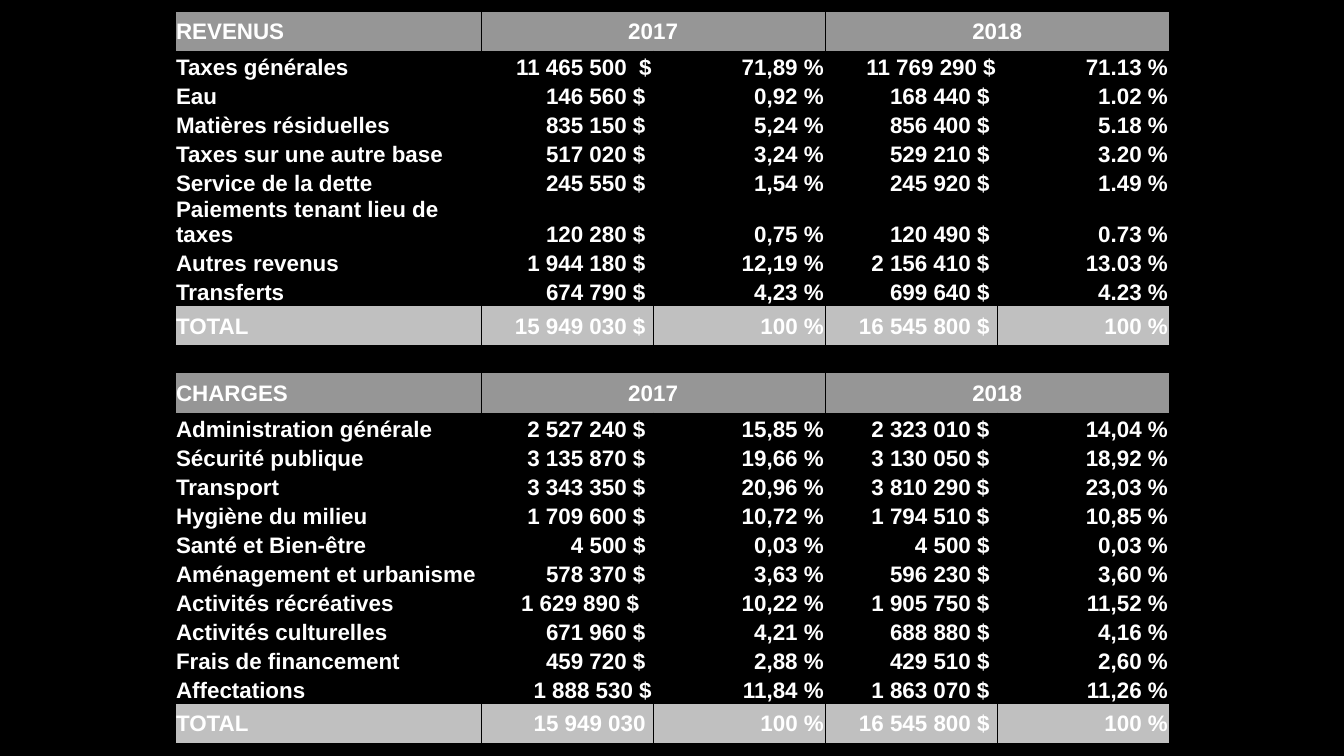
from lxml.etree import SubElement
from pptx import Presentation
from pptx.dml.color import RGBColor
from pptx.enum.text import MSO_ANCHOR, PP_ALIGN
from pptx.oxml.ns import qn
from pptx.util import Inches, Pt

BLACK, WHITE, GREY, SILVER = "000000", "FFFFFF", "969696", "C0C0C0"
PLAIN = "{2D5ABB26-0587-4C30-8999-92F81FD0307C}"
WIDTHS = [2.28, 1.28, 1.28, 1.28, 1.28]
HEIGHTS = {"head": 0.3, "total": 0.3, "gap": 0.2, "tall": 0.37}
FILLS = {"head": GREY, "total": SILVER}
STEP = Inches(2.16) // 10
FONT = {"name": "Arial", "size": Pt(12), "bold": True}
INSETS = {"margin_left": 0.01, "margin_top": 0.01, "margin_right": 0.01, "margin_bottom": 0}

ROWS = [
    ("head", "REVENUS|2017||2018|"),
    ("data", "Taxes générales|11 465 500  $|71,89 %|11 769 290 $|71.13 %"),
    ("data", "Eau|146 560 $ |0,92 %|168 440 $ |1.02 %"),
    ("data", "Matières résiduelles|835 150 $ |5,24 %|856 400 $ |5.18 %"),
    ("data", "Taxes sur une autre base|517 020 $ |3,24 %|529 210 $ |3.20 %"),
    ("data", "Service de la dette|245 550 $ |1,54 %|245 920 $ |1.49 %"),
    ("tall", "Paiements tenant lieu de taxes|120 280 $ |0,75 %|120 490 $ |0.73 %"),
    ("data", "Autres revenus|1 944 180 $ |12,19 %|2 156 410 $ |13.03 %"),
    ("data", "Transferts|674 790 $ |4,23 %|699 640 $ |4.23 %"),
    ("total", "TOTAL|15 949 030 $ |100 %|16 545 800 $ |100 %"),
    ("gap", "||||"),
    ("head", "CHARGES|2017||2018|"),
    ("data", "Administration générale|2 527 240 $ |15,85 %|2 323 010 $ |14,04 %"),
    ("data", "Sécurité publique|3 135 870 $ |19,66 %|3 130 050 $ |18,92 %"),
    ("data", "Transport|3 343 350 $ |20,96 %|3 810 290 $ |23,03 %"),
    ("data", "Hygiène du milieu|1 709 600 $ |10,72 %|1 794 510 $ |10,85 %"),
    ("data", "Santé et Bien-être|4 500 $ |0,03 %|4 500 $ |0,03 %"),
    ("data", "Aménagement et urbanisme|578 370 $ |3,63 %|596 230 $ |3,60 %"),
    ("data", "Activités récréatives|1 629 890 $  |10,22 %|1 905 750 $ |11,52 %"),
    ("data", "Activités culturelles|671 960 $ |4,21 %|688 880 $ |4,16 %"),
    ("data", "Frais de financement|459 720 $ |2,88 %|429 510 $ |2,60 %"),
    ("data", "Affectations|1 888 530 $|11,84 %|1 863 070 $ |11,26 %"),
    ("total", "TOTAL|15 949 030 |100 %|16 545 800 $ |100 %"),
]


def color(text):
    return RGBColor.from_string(text)


def edges(row, col):
    kind = ROWS[row][0]
    body = kind in ("data", "tall")
    last = len(ROWS) - 1
    sides = {}
    if kind != "gap" or col == 0:
        sides["lnL"] = 1 if col == 0 or body and col == 3 else 0.5
    if kind != "gap" or col == 4:
        sides["lnR"] = 1 if body and col == 2 or kind == "gap" else 0.5
    if not body or ROWS[row - 1][0] == "head":
        sides["lnT"] = 1 if row == 0 else 0.5
    if not body or ROWS[row + 1][0] == "total":
        sides["lnB"] = 1 if row == last else 0.5
    return sides


def border(cell, sides):
    props = cell._tc.get_or_add_tcPr()
    for name, width in sides.items():
        line = SubElement(props, qn("a:" + name), w=str(Pt(width)))
        fill = SubElement(line, qn("a:solidFill"))
        SubElement(fill, qn("a:srgbClr"), val=BLACK)


def write(cell, text, align):
    para = cell.text_frame.paragraphs[0]
    para.alignment = align
    if not text:
        mark = SubElement(para._p, qn("a:endParaRPr"), sz="1200")
        SubElement(mark, qn("a:latin"), typeface=FONT["name"])
        return
    run = para.add_run()
    run.text = text
    for name, value in FONT.items():
        setattr(run.font, name, value)
    run.font.color.rgb = color(WHITE)


def paint(cell, kind):
    if kind in FILLS:
        cell.fill.solid()
        cell.fill.fore_color.rgb = color(FILLS[kind])
    else:
        cell.fill.background()


def place(cell, kind, col, text):
    for name, value in INSETS.items():
        setattr(cell, name, Inches(value))
    body = kind in ("data", "tall")
    cell.vertical_anchor = MSO_ANCHOR.BOTTOM if body else MSO_ANCHOR.MIDDLE
    side = PP_ALIGN.CENTER if kind == "head" else PP_ALIGN.RIGHT
    write(cell, text, side if col else PP_ALIGN.LEFT)


def budget(slide):
    frame = slide.shapes.add_table(
        len(ROWS), len(WIDTHS), Inches(1.3), Inches(0.08), Inches(7.4), Inches(5.48))
    table = frame.table
    table.first_row = table.horz_banding = False
    table._tbl.tblPr.find(qn("a:tableStyleId")).text = PLAIN
    for column, width in zip(table.columns, WIDTHS):
        column.width = Inches(width)
    for row, (kind, line) in enumerate(ROWS):
        table.rows[row].height = Inches(HEIGHTS[kind]) if kind in HEIGHTS else STEP
        if kind == "head":
            for col in (1, 3):
                table.cell(row, col).merge(table.cell(row, col + 1))
        for col, text in enumerate(line.split("|")):
            cell = table.cell(row, col)
            if not cell.is_spanned:
                place(cell, kind, col, text)
                border(cell, edges(row, col))
                paint(cell, kind)


def main():
    deck = Presentation()
    deck.slide_width = Inches(10)
    deck.slide_height = Inches(10) * 9 // 16
    slide = deck.slides.add_slide(deck.slide_layouts[6])
    back = slide.background.fill
    back.solid()
    back.fore_color.rgb = color(BLACK)
    budget(slide)
    deck.save("out.pptx")


if __name__ == "__main__":
    main()
